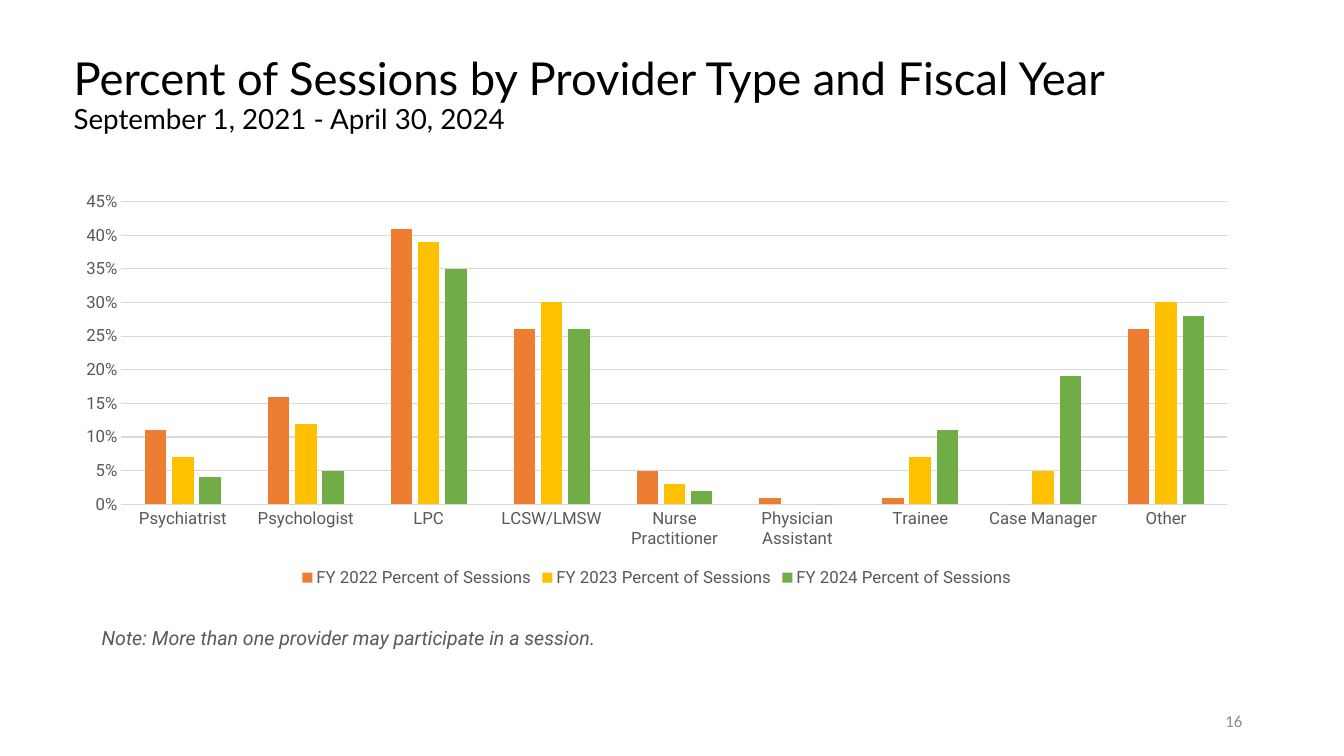
from copy import deepcopy

from pptx import Presentation
from pptx.chart.data import CategoryChartData
from pptx.dml.color import RGBColor
from pptx.enum.chart import XL_CHART_TYPE, XL_LEGEND_POSITION, XL_TICK_MARK
from pptx.enum.text import MSO_ANCHOR, MSO_AUTO_SIZE, PP_ALIGN
from pptx.util import Inches, Pt

GREY = "595959"
RULE = "D9D9D9"
PROVIDERS = ["Psychiatrist", "Psychologist", "LPC", "LCSW/LMSW", "Nurse Practitioner",
             "Physician Assistant", "Trainee", "Case Manager", "Other"]
# Fiscal year: bar colour, share of sessions per provider
SESSIONS = {
    2022: ("ED7D31", [0.11, 0.16, 0.41, 0.26, 0.05, 0.01, 0.01, 0, 0.26]),
    2023: ("FFC000", [0.07, 0.12, 0.39, 0.3, 0.03, 0, 0.07, 0.05, 0.3]),
    2024: ("70AD47", [0.04, 0.05, 0.35, 0.26, 0.02, 0, 0.11, 0.19, 0.28]),
}


def colour(value):
    return RGBColor.from_string(value)


def style(font, name, size, hex_colour):
    font.name = name
    font.size = Pt(size)
    font.color.rgb = colour(hex_colour)


def add_span(para, text, name, size, hex_colour):
    span = para.add_run()
    span.text = text
    style(span.font, name, size, hex_colour)
    return span


def set_title(page, heading, period):
    title = page.shapes.title
    title.left, title.top = Inches(0.63), Inches(0.48)
    title.width, title.height = Inches(12.08), Inches(0.94)
    frame = title.text_frame
    frame.auto_size = MSO_AUTO_SIZE.NONE
    frame.vertical_anchor = MSO_ANCHOR.MIDDLE
    para = frame.paragraphs[0]
    para.alignment = PP_ALIGN.LEFT
    para.line_spacing = 0.9
    span = add_span(para, heading, "Lato", 32.4, "000000")
    # The line break takes the heading's size
    para.add_line_break()
    para._p[-1].append(deepcopy(span._r.rPr))
    add_span(para, period, "Lato", 19.8, "000000")


def add_text(page, left, top, width, height, text, name, size, hex_colour,
             align=PP_ALIGN.LEFT, wrap=True):
    box = page.shapes.add_textbox(Inches(left), Inches(top), Inches(width), Inches(height))
    frame = box.text_frame
    frame.word_wrap = wrap
    frame.vertical_anchor = MSO_ANCHOR.MIDDLE
    para = frame.paragraphs[0]
    para.alignment = align
    return add_span(para, text, name, size, hex_colour)


def style_line(line):
    line.color.rgb = colour(RULE)
    line.width = Pt(0.75)


def add_sessions_chart(page):
    data = CategoryChartData(number_format="0%")
    data.categories = PROVIDERS
    for year, (_, shares) in SESSIONS.items():
        data.add_series(f"FY {year} Percent of Sessions", shares)
    chart = page.shapes.add_chart(XL_CHART_TYPE.COLUMN_CLUSTERED, Inches(0.62), Inches(1.82),
                                  Inches(11.79), Inches(4.05), data).chart
    chart.has_title = False
    style(chart.font, "Calibri", 10, "000000")

    # Bars
    plot = chart.plots[0]
    plot.vary_by_categories = False
    plot.gap_width = 219
    plot.overlap = -27
    for series, (bar_colour, _) in zip(plot.series, SESSIONS.values()):
        series.format.fill.solid()
        series.format.fill.fore_color.rgb = colour(bar_colour)

    # Axes
    for axis in (chart.category_axis, chart.value_axis):
        axis.major_tick_mark = axis.minor_tick_mark = XL_TICK_MARK.NONE
        style(axis.tick_labels.font, "Roboto", 12, GREY)
    style_line(chart.category_axis.format.line)
    values = chart.value_axis
    values.minimum_scale, values.maximum_scale, values.major_unit = 0, 0.45, 0.05
    values.tick_labels.number_format = "0%"
    values.tick_labels.number_format_is_linked = False
    values.format.line.fill.background()
    style_line(values.major_gridlines.format.line)

    # Legend
    chart.has_legend = True
    chart.legend.position = XL_LEGEND_POSITION.BOTTOM
    chart.legend.include_in_layout = False
    style(chart.legend.font, "Roboto", 12, GREY)


def main():
    deck = Presentation()
    deck.slide_width, deck.slide_height = Inches(13.33), Inches(7.5)
    page = deck.slides.add_slide(deck.slide_layouts[5])

    set_title(page, "Percent of Sessions by Provider Type and Fiscal Year",
              "September 1, 2021 - April 30, 2024")
    add_sessions_chart(page)
    note = add_text(page, 0.91, 6.16, 5.27, 0.34,
                    "Note: More than one provider may participate in a session.",
                    "Roboto", 14, GREY, wrap=False)
    note.font.italic = True
    add_text(page, 9.42, 6.95, 3, 0.4, "16", "Calibri", 12, "8C8C8C", PP_ALIGN.RIGHT)

    deck.save("out.pptx")


if __name__ == "__main__":
    main()
